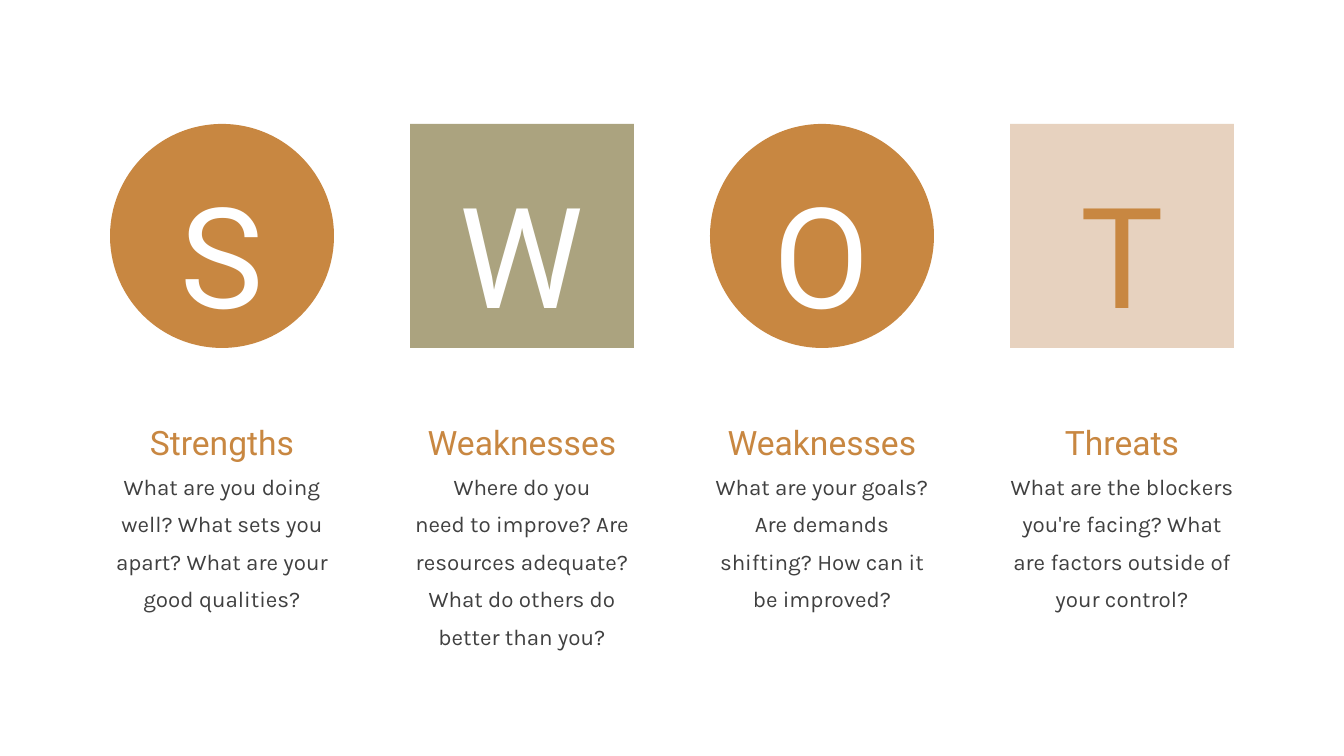
"""Build a SWOT slide with four lettered badges, headings and questions."""
from dataclasses import dataclass

import pptx
import pptx.dml.color
import pptx.enum.shapes
import pptx.enum.text
import pptx.util

SCALE = 914400 / 134.4
COLORS = {
    "orange": "C88741",
    "olive": "ABA37F",
    "sand": "E7D2BF",
    "white": "FFFFFF",
    "gray": "404040",
}
OVAL = pptx.enum.shapes.MSO_SHAPE.OVAL
SQUARE = pptx.enum.shapes.MSO_SHAPE.RECTANGLE
LEFT, STEP, SIZE = 110, 300, 224
BADGE_TOP, LETTER_TOP, HEADING_TOP, BODY_TOP = 124, 152, 410, 462
LETTER_WIDTH, LETTER_HEIGHT = 146, 169
HEADING_HEIGHT, LINE_HEIGHT = 40, 38


@dataclass
class Topic:
    letter: str
    heading: str
    body: str
    lines: int
    outline: pptx.enum.shapes.MSO_SHAPE
    fill: str
    letter_color: str = "white"


TOPICS = [
    Topic("S", "Strengths",
          "What are you doing well? What sets you apart? What are your good qualities?",
          4, OVAL, "orange"),
    Topic("W", "Weaknesses",
          "Where do you\nneed to improve? Are resources adequate?\nWhat do others do better than you?",
          5, SQUARE, "olive"),
    Topic("O", "Weaknesses",
          "What are your goals? Are demands shifting? How can it be improved?",
          4, OVAL, "orange"),
    Topic("T", "Threats",
          "What are the blockers you're facing? What are factors outside of your control?",
          4, SQUARE, "sand", "orange"),
]


def px(length: int) -> pptx.util.Emu:
    return pptx.util.Emu(round(length * SCALE))


def rgb(name: str) -> pptx.dml.color.RGBColor:
    return pptx.dml.color.RGBColor.from_string(COLORS[name])


def add_text(page, text: str, *, left: int, top: int, width: int, height: int,
             font: str, size: int, color: str, spacing: float) -> None:
    box = page.shapes.add_textbox(px(left), px(top), px(width), px(height))
    frame = box.text_frame
    frame.word_wrap = True
    frame.auto_size = pptx.enum.text.MSO_AUTO_SIZE.SHAPE_TO_FIT_TEXT
    frame.margin_left = frame.margin_right = 0
    frame.margin_top = frame.margin_bottom = 0
    frame.text = text
    for para in frame.paragraphs:
        para.alignment = pptx.enum.text.PP_ALIGN.CENTER
        para.line_spacing = spacing
        for span in para.runs:
            span.font.name = font
            span.font.size = pptx.util.Pt(size)
            span.font.color.rgb = rgb(color)


def add_badge(page, topic: Topic, left: int) -> None:
    badge = page.shapes.add_shape(topic.outline, px(left), px(BADGE_TOP), px(SIZE), px(SIZE))
    badge.shadow.inherit = False
    badge.fill.solid()
    badge.fill.fore_color.rgb = rgb(topic.fill)
    badge.line.fill.background()
    add_text(page, topic.letter, left=left + (SIZE - LETTER_WIDTH) // 2, top=LETTER_TOP,
             width=LETTER_WIDTH, height=LETTER_HEIGHT,
             font="Roboto", size=75, color=topic.letter_color, spacing=1.1)


def add_topic(page, topic: Topic, left: int) -> None:
    add_badge(page, topic, left)
    add_text(page, topic.heading, left=left, top=HEADING_TOP, width=SIZE,
             height=HEADING_HEIGHT, font="Roboto", size=18, color="orange", spacing=1.3)
    add_text(page, topic.body, left=left, top=BODY_TOP, width=SIZE,
             height=topic.lines * LINE_HEIGHT, font="Karla", size=12, color="gray", spacing=1.4)


def main() -> None:
    deck = pptx.Presentation()
    deck.slide_width, deck.slide_height = px(1344), px(756)
    page = deck.slides.add_slide(deck.slide_layouts[6])
    for index, topic in enumerate(TOPICS):
        add_topic(page, topic, LEFT + index * STEP)
    deck.save("out.pptx")


if __name__ == "__main__":
    main()
